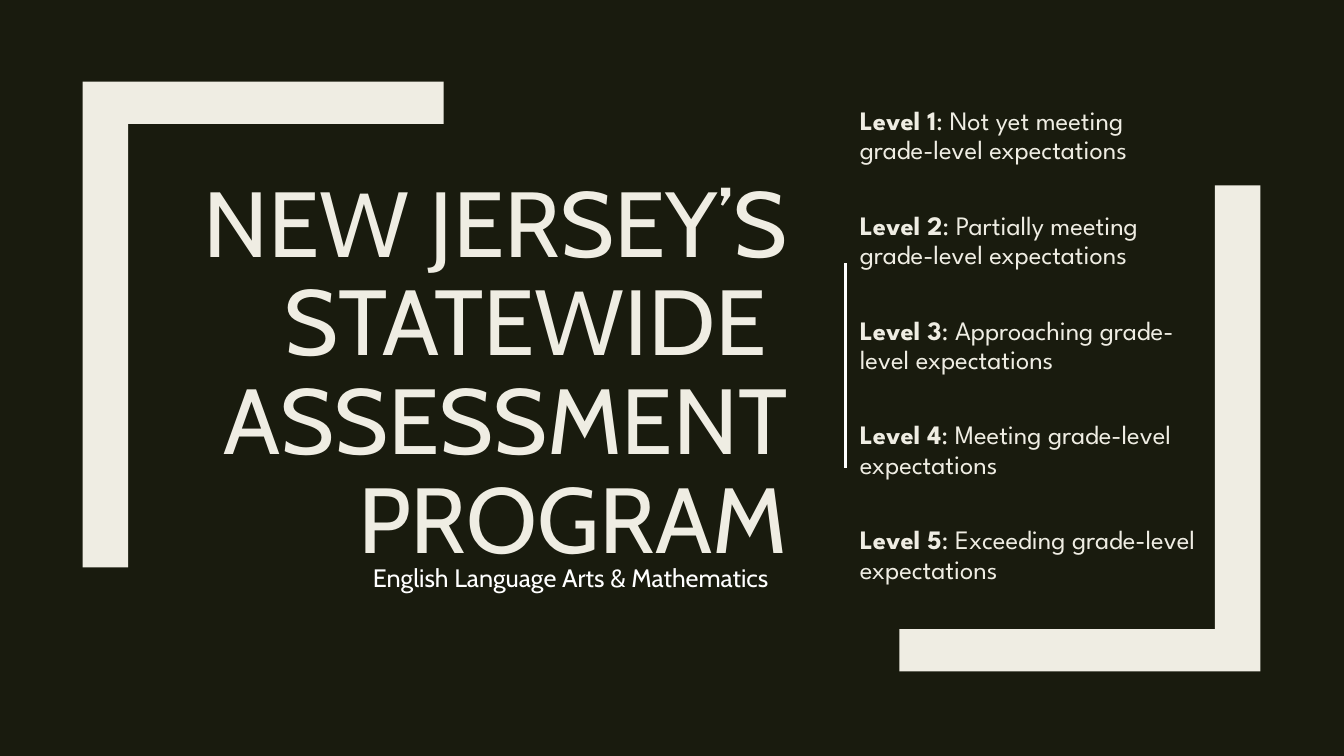
from lxml import etree
from pptx import Presentation
from pptx import util as u
from pptx.dml.color import RGBColor
from pptx.enum import shapes, text
from pptx.oxml.ns import qn

DARK = RGBColor(0x19, 0x1B, 0x0E)
CREAM = RGBColor(0xEF, 0xED, 0xE3)
WHITE = RGBColor(0xFF, 0xFF, 0xFF)
HEADING_FONT = "Cabin"
BODY_FONT = "League Spartan"
LEVELS = [
    "Not yet meeting grade-level expectations",
    "Partially meeting grade-level expectations",
    "Approaching grade-level expectations",
    "Meeting grade-level expectations",
    "Exceeding grade-level expectations",
]


def style(run, font, size, color, bold=False):
    """Set the font, size, colour and weight of a run."""
    run.font.name = font
    run.font.size = u.Pt(size)
    run.font.color.rgb = color
    run.font.bold = bold


def add_bracket(slide, corner_x, corner_y, direction):
    """Draw an L-shaped bracket from its outer corner; direction is 1 or -1."""
    width, height, upright, bar = 3.58, 4.82, 0.45, 0.42
    offsets = [(0, 0), (width, 0), (width, bar), (upright, bar),
               (upright, height), (0, height)]
    points = [(u.Inches(corner_x + direction * x), u.Inches(corner_y + direction * y))
              for x, y in offsets]
    builder = slide.shapes.build_freeform(*points[0])
    builder.add_line_segments(points[1:], close=True)
    bracket = builder.convert_to_shape()
    bracket.shadow.inherit = False
    bracket.fill.solid()
    bracket.fill.fore_color.rgb = CREAM
    bracket.line.fill.background()


def add_heading(slide, left, top, width, height):
    """Place the title and, below it, the line of subjects."""
    title = slide.shapes.title
    title.left, title.top = u.Inches(left), u.Inches(top)
    title.width, title.height = u.Inches(width), u.Inches(height)
    frame = title.text_frame
    frame.word_wrap = True
    frame.auto_size = text.MSO_AUTO_SIZE.NONE
    frame.vertical_anchor = text.MSO_ANCHOR.MIDDLE
    frame.text = "NEW JERSEY’S STATEWIDE \vASSESSMENT PROGRAM"
    paragraph = frame.paragraphs[0]
    paragraph.alignment = text.PP_ALIGN.RIGHT
    paragraph.line_spacing = 0.89
    for run in paragraph.runs:
        style(run, HEADING_FONT, 66, CREAM)

    subjects_width = 4.31
    subjects = slide.shapes.add_textbox(
        u.Inches(left + width - subjects_width), u.Inches(top + height - 0.3),
        u.Inches(subjects_width), u.Inches(0.4)).text_frame
    subjects.word_wrap = True
    subjects.text = "English Language Arts & Mathematics"
    style(subjects.paragraphs[0].runs[0], HEADING_FONT, 18, WHITE)


def add_levels(slide, left, top, width, height):
    """List the performance levels beside a thin vertical rule."""
    frame = slide.shapes.add_textbox(
        u.Inches(left), u.Inches(top), u.Inches(width), u.Inches(height)).text_frame
    frame.word_wrap = True
    for number, meaning in enumerate(LEVELS, 1):
        paragraph = frame.paragraphs[0] if number == 1 else frame.add_paragraph()
        paragraph.line_spacing = 0.92
        paragraph.space_after = u.Pt(33)
        for words, bold in ((f"Level {number}", True), (f": {meaning}", False)):
            run = paragraph.add_run()
            run.text = words
            style(run, BODY_FONT, 19, CREAM, bold)

    rule_x = u.Inches(left - 0.04)
    rule = slide.shapes.add_connector(
        shapes.MSO_CONNECTOR.STRAIGHT,
        rule_x, u.Inches(top + 1.6), rule_x, u.Inches(top + 3.63))
    rule.line.color.rgb = WHITE
    rule.line.width = u.Pt(2)
    etree.SubElement(rule._element.spPr, qn("a:effectLst"))


def main():
    """Build the assessment program slide and save it."""
    deck = Presentation()
    deck.slide_width, deck.slide_height = u.Inches(13.33), u.Inches(7.5)
    slide = deck.slides.add_slide(deck.slide_layouts[5])
    slide.background.fill.solid()
    slide.background.fill.fore_color.rgb = DARK
    add_bracket(slide, 12.5, 6.66, -1)
    add_bracket(slide, 0.82, 0.81, 1)
    add_heading(slide, 1.62, 1.62, 6.29, 4.21)
    add_levels(slide, 8.43, 1.01, 3.58, 5.24)
    deck.save("out.pptx")


if __name__ == "__main__":
    main()
